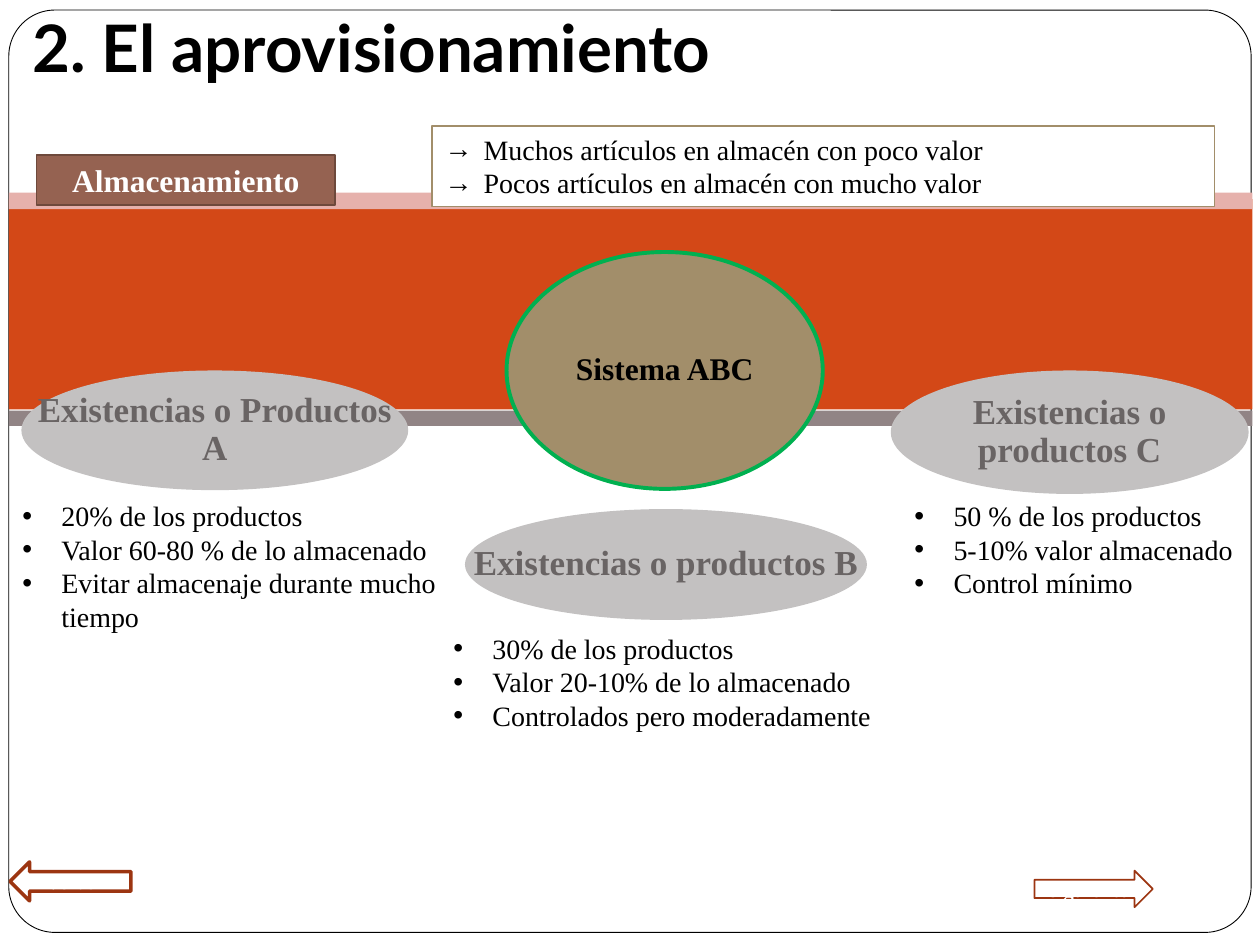
from dataclasses import dataclass

import pptx
import pptx.dml.color
import pptx.enum.shapes
import pptx.enum.text
import pptx.oxml
import pptx.oxml.ns
import pptx.util

Inches = pptx.util.Inches
Pt = pptx.util.Pt
Kind = pptx.enum.shapes.MSO_SHAPE
Align = pptx.enum.text.PP_ALIGN
Anchor = pptx.enum.text.MSO_ANCHOR

SERIF = "Times New Roman"
COLOURS = {
    "white": "FFFFFF",
    "black": "000000",
    "orange": "D34817",
    "pink": "E6B1AC",
    "mauve": "918485",
    "rust": "9C3511",
    "brown": "956251",
    "dark brown": "6E493C",
    "sand": "A28E6A",
    "green": "00B050",
    "silver": "C3C1C1",
    "grey": "696464",
}


@dataclass
class Area:
    left: float
    top: float
    width: float
    height: float

    def lengths(self) -> list:
        return [Inches(n) for n in (self.left, self.top, self.width, self.height)]


@dataclass
class Band:
    area: Area
    fill: str


@dataclass
class Oval:
    area: Area
    label: str
    fill: str = "silver"
    line: str | None = None
    colour: str = "grey"
    size: float = 20


@dataclass
class Points:
    area: Area
    lines: list[str]


@dataclass
class Arrow:
    kind: int
    area: Area
    label: str
    weight: float


BANDS = [
    Band(Area(0.07, 1.58, 9.87, 1.67), "orange"),
    Band(Area(0.07, 1.53, 9.87, 0.13), "pink"),
    Band(Area(0.07, 3.26, 9.87, 0.12), "mauve"),
]
ARROWS = [
    Arrow(Kind.LEFT_ARROW, Area(0.08, 6.84, 0.96, 0.31), "Volver", 2),
    Arrow(Kind.RIGHT_ARROW, Area(8.21, 6.91, 0.94, 0.29), "siguiente", 1),
]
OVALS = [
    Oval(Area(4.02, 2, 2.51, 1.88), "Sistema ABC", "sand", "green", "black", 18),
    Oval(Area(3.69, 4.04, 3.19, 0.88), "Existencias o productos B"),
    Oval(Area(7.07, 2.94, 2.84, 0.98), "Existencias o productos C"),
    Oval(Area(0.17, 2.94, 3.07, 0.95), "Existencias o Productos A"),
]
POINTS = [
    Points(Area(3.5, 4.96, 3.72, 0.91), [
        "30% de los productos",
        "Valor 20-10% de lo almacenado",
        "Controlados pero moderadamente",
    ]),
    Points(Area(7.16, 3.91, 2.84, 0.91), [
        "50 % de los productos",
        "5-10% valor almacenado",
        "Control mínimo",
    ]),
    Points(Area(0.08, 3.91, 3.67, 1.18), [
        "20% de los productos",
        "Valor 60-80 % de lo almacenado",
        "Evitar almacenaje durante mucho tiempo",
    ]),
]
STOCK_PROBLEMS = [
    "Muchos artículos en almacén con poco valor",
    "Pocos artículos en almacén con mucho valor",
]


def rgb(name: str) -> pptx.dml.color.RGBColor:
    return pptx.dml.color.RGBColor.from_string(COLOURS[name])


def add_shape(page, kind: int, area: Area, fill: str | None = None,
              line: str | None = None, weight: float = 1):
    shape = page.shapes.add_shape(kind, *area.lengths())
    shape.shadow.inherit = False
    if fill:
        shape.fill.solid()
        shape.fill.fore_color.rgb = rgb(fill)
    else:
        shape.fill.background()
    if line:
        shape.line.color.rgb = rgb(line)
        shape.line.width = Pt(weight)
    else:
        shape.line.fill.background()
    return shape


def add_box(page, area: Area):
    return page.shapes.add_textbox(*area.lengths())


def set_bullet(para, mark: str) -> None:
    props = para._p.get_or_add_pPr()
    props.set("marL", str(Inches(0.31)))
    props.set("indent", str(-Inches(0.31)))
    for tag, key, value in (("buFont", "typeface", "Arial"), ("buChar", "char", mark)):
        child = pptx.oxml.parse_xml(f"<a:{tag} {pptx.oxml.ns.nsdecls('a')}/>")
        child.set(key, value)
        props.append(child)


def write(box, lines: list[str], *, size: float, colour: str = "black", font: str = SERIF,
          bold: bool = False, align=Align.LEFT, anchor=Anchor.TOP, bullet: str | None = None,
          inset: float | None = None, spacing: float | None = None) -> None:
    frame = box.text_frame
    frame.word_wrap = True
    frame.vertical_anchor = anchor
    if inset is not None:
        frame.margin_left = frame.margin_right = Inches(inset)
        frame.margin_top = frame.margin_bottom = Inches(inset)
    for index, line in enumerate(lines):
        para = frame.add_paragraph() if index else frame.paragraphs[0]
        para.alignment = align
        if spacing:
            para.line_spacing = spacing
        if bullet:
            set_bullet(para, bullet)
        span = para.add_run()
        span.text = line
        span.font.name = font
        span.font.size = Pt(size)
        span.font.bold = bold
        span.font.color.rgb = rgb(colour)


def draw_oval(page, oval: Oval) -> None:
    add_shape(page, Kind.OVAL, oval.area, oval.fill, oval.line, 2.25)
    write(add_box(page, oval.area), [oval.label], size=oval.size, colour=oval.colour, bold=True,
          align=Align.CENTER, anchor=Anchor.MIDDLE, inset=0.03, spacing=0.9)


def draw_arrow(page, arrow: Arrow) -> None:
    shape = add_shape(page, arrow.kind, arrow.area, line="rust", weight=arrow.weight)
    write(shape, [arrow.label], size=12, colour="white", bold=True,
          align=Align.CENTER, anchor=Anchor.MIDDLE)


def main() -> None:
    deck = pptx.Presentation()
    deck.slide_width, deck.slide_height = Inches(10), Inches(7.5)
    page = deck.slides.add_slide(deck.slide_layouts[6])

    border = add_shape(page, Kind.ROUNDED_RECTANGLE, Area(0.07, 0.08, 9.86, 7.32),
                       "white", "black", 0.5)
    border.adjustments[0] = 0.05
    for band in BANDS:
        add_shape(page, Kind.RECTANGLE, band.area, band.fill)

    write(add_box(page, Area(0.16, 0.05, 9, 0.63)), ["2. El aprovisionamiento"],
          size=37.4, font="Lato", bold=True, anchor=Anchor.MIDDLE)
    for arrow in ARROWS:
        draw_arrow(page, arrow)

    heading = add_shape(page, Kind.RECTANGLE, Area(0.29, 1.23, 2.37, 0.4), "brown", "dark brown")
    write(heading, ["Almacenamiento"], size=18, colour="white", bold=True, align=Align.CENTER)
    for oval in OVALS:
        draw_oval(page, oval)
    for points in POINTS:
        write(add_box(page, points.area), points.lines, size=16, bullet="•")

    problems = add_shape(page, Kind.RECTANGLE, Area(3.43, 1, 6.21, 0.64), "white", "sand")
    write(problems, STOCK_PROBLEMS, size=16, bullet="→")
    deck.save("out.pptx")


if __name__ == "__main__":
    main()
